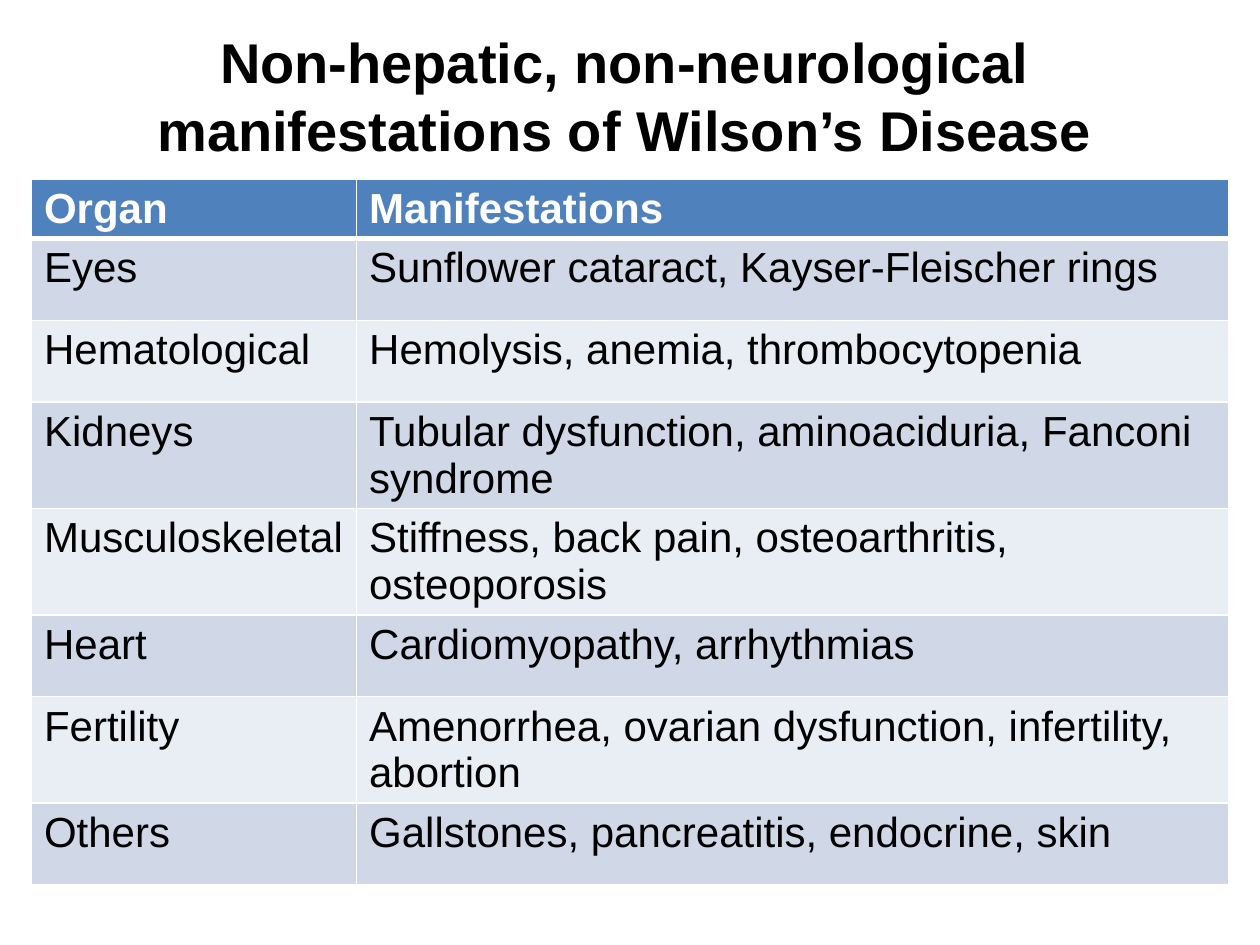
from pptx import Presentation
from pptx.dml.color import RGBColor
from pptx.enum.text import MSO_ANCHOR, MSO_AUTO_SIZE, PP_ALIGN
from pptx.oxml import parse_xml
from pptx.oxml.ns import nsdecls
from pptx.util import Inches, Pt

FONT = "Arial"
BLACK = RGBColor(0x00, 0x00, 0x00)
WHITE = RGBColor(0xFF, 0xFF, 0xFF)
HEADER_BLUE = RGBColor(0x4F, 0x81, 0xBD)
BAND_DARK = RGBColor(0xD0, 0xD8, 0xE8)
BAND_LIGHT = RGBColor(0xE9, 0xED, 0xF4)

TITLE = "Non-hepatic, non-neurological manifestations of Wilson’s Disease"
ROWS = [
    ("Organ", "Manifestations"),
    ("Eyes", "Sunflower cataract, Kayser-Fleischer rings"),
    ("Hematological", "Hemolysis, anemia, thrombocytopenia"),
    ("Kidneys", "Tubular dysfunction, aminoaciduria, Fanconi syndrome"),
    ("Musculoskeletal", "Stiffness, back pain, osteoarthritis, osteoporosis"),
    ("Heart", "Cardiomyopathy, arrhythmias"),
    ("Fertility", "Amenorrhea, ovarian dysfunction, infertility, abortion"),
    ("Others", "Gallstones, pancreatitis, endocrine, skin"),
]
COLUMN_WIDTHS = (2.58, 6.92)
HEADER_HEIGHT, ROW_HEIGHT = 0.46, 0.65


def add_text(para, text, size, color, bold):
    span = para.add_run()
    span.text = text
    span.font.name = FONT
    span.font.size = Pt(size)
    span.font.bold = bold
    span.font.color.rgb = color


def add_title(page):
    box = page.shapes.title
    box.left, box.top = Inches(0.17), Inches(0.17)
    box.width, box.height = Inches(9.58), Inches(1.17)
    frame = box.text_frame
    frame.word_wrap = True
    frame.auto_size = MSO_AUTO_SIZE.NONE
    frame.vertical_anchor = MSO_ANCHOR.MIDDLE
    para = frame.paragraphs[0]
    para.alignment = PP_ALIGN.CENTER
    add_text(para, TITLE, 32, BLACK, True)


def set_borders(cell, top, bottom):
    """Draw white cell borders; top and bottom widths are in points."""
    properties = cell._tc.get_or_add_tcPr()
    for side, width in (("L", 1), ("R", 1), ("T", top), ("B", bottom)):
        properties.append(parse_xml(
            f'<a:ln{side} {nsdecls("a")} w="{Pt(width)}"><a:solidFill>'
            f'<a:srgbClr val="{WHITE}"/></a:solidFill></a:ln{side}>'))


def fill_cell(cell, text, row):
    is_header = row == 0
    # The rule under the header is thicker than the others
    set_borders(cell, 3 if row == 1 else 1, 3 if is_header else 1)
    cell.fill.solid()
    band = BAND_DARK if row % 2 else BAND_LIGHT
    cell.fill.fore_color.rgb = HEADER_BLUE if is_header else band
    add_text(cell.text_frame.paragraphs[0], text, 24,
             WHITE if is_header else BLACK, is_header)


def add_organ_table(page):
    height = HEADER_HEIGHT + ROW_HEIGHT * (len(ROWS) - 1)
    table = page.shapes.add_table(
        len(ROWS), len(COLUMN_WIDTHS), Inches(0.25), Inches(1.42),
        Inches(sum(COLUMN_WIDTHS)), Inches(height)).table
    for column, width in zip(table.columns, COLUMN_WIDTHS):
        column.width = Inches(width)
    for row, texts in enumerate(ROWS):
        table.rows[row].height = Inches(ROW_HEIGHT if row else HEADER_HEIGHT)
        for column, text in enumerate(texts):
            fill_cell(table.cell(row, column), text, row)


def main():
    deck = Presentation()
    deck.slide_width, deck.slide_height = Inches(10), Inches(7.5)
    # Title-only layout
    page = deck.slides.add_slide(deck.slide_layouts[5])
    add_title(page)
    add_organ_table(page)
    deck.save("out.pptx")


if __name__ == "__main__":
    main()
